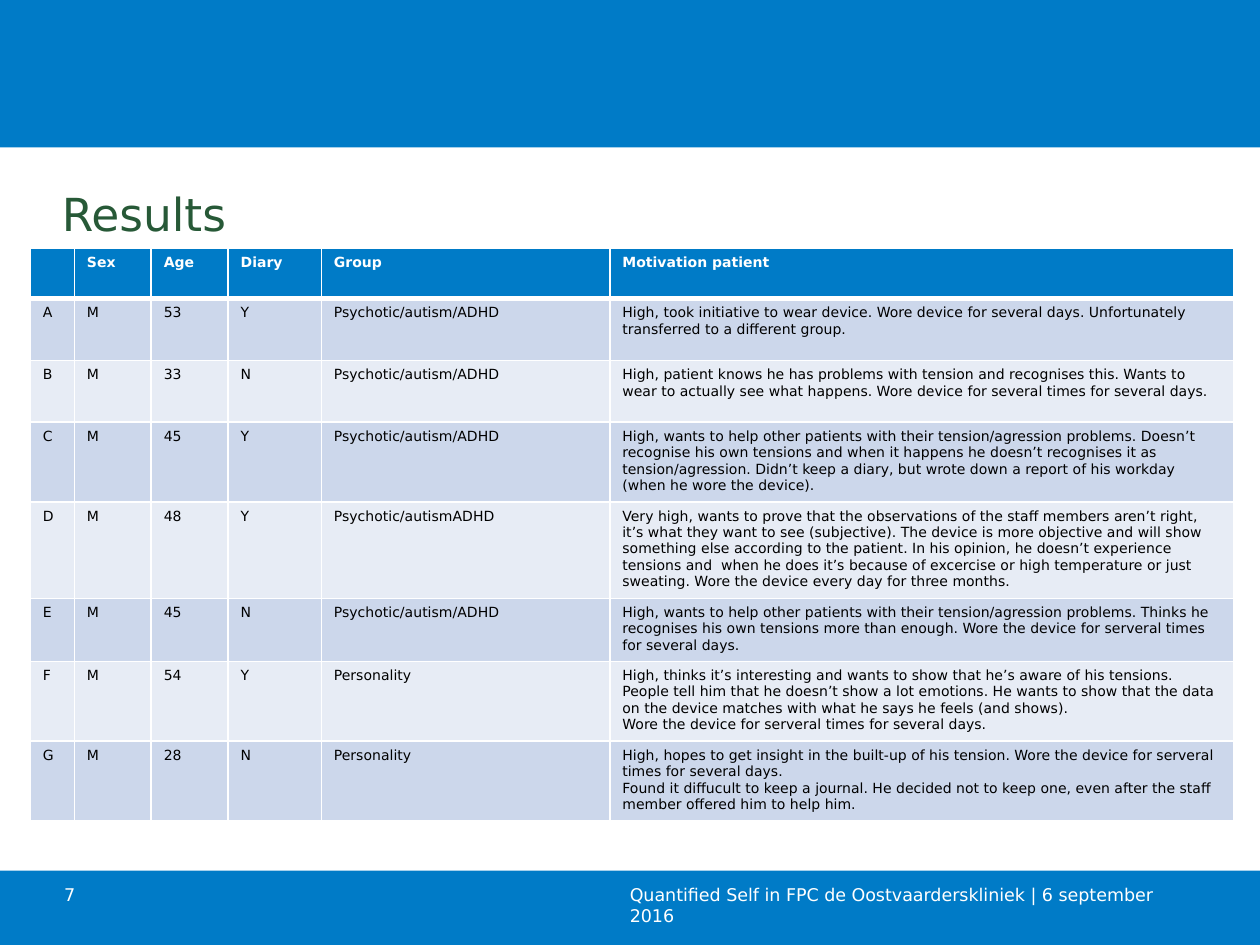
from dataclasses import dataclass

from lxml import etree
from pptx import Presentation
from pptx.dml.color import RGBColor
from pptx.enum.shapes import MSO_SHAPE
from pptx.enum.text import MSO_ANCHOR, PP_ALIGN
from pptx.oxml.ns import qn
from pptx.util import Inches, Pt

RECTANGLE = MSO_SHAPE.RECTANGLE
LEFT = PP_ALIGN.LEFT
TOP, MIDDLE = MSO_ANCHOR.TOP, MSO_ANCHOR.MIDDLE
TITLE_ONLY = 5
FONT = "DejaVu Sans"
COLORS = {
    "blue": "007BC7",
    "green": "275937",
    "odd": "CCD7EB",
    "even": "E7ECF5",
    "white": "FFFFFF",
    "black": "000000",
}


@dataclass
class Area:
    left: float
    top: float
    width: float
    height: float

    def lengths(self) -> list:
        return [Inches(v) for v in (self.left, self.top, self.width, self.height)]


@dataclass
class Patient:
    code: str
    sex: str
    age: str
    diary: str
    group: str
    motivation: str
    row_height: float

    def texts(self) -> list:
        return [self.code, self.sex, self.age, self.diary, self.group, self.motivation]


BANDS = [Area(0, 0, 10, 1.17), Area(0, 6.91, 10, 0.59)]
TITLE_AREA = Area(0.39, 1.38, 9, 0.62)
TABLE_AREA = Area(0.24, 1.97, 9.55, 4.48)
FOOTERS = [
    (Area(4.9, 6.97, 4.55, 0.39),
     "Quantified Self in FPC de Oostvaarderskliniek | 6 september 2016"),
    (Area(0.41, 6.97, 0.78, 0.39), "7"),
]
HEADERS = ["", "Sex", "Age", "Diary", "Group", "Motivation patient"]
COLUMN_WIDTHS = [0.35, 0.61, 0.61, 0.74, 2.29, 4.95]
HEADER_HEIGHT = 0.4
MIXED = "Psychotic/autism/ADHD"
PATIENTS = [
    Patient("A", "M", "53", "Y", MIXED,
            "High, took initiative to wear device. Wore device for several days. "
            "Unfortunately transferred to a different group.", 0.49),
    Patient("B", "M", "33", "N", MIXED,
            "High, patient knows he has problems with tension and recognises this. "
            "Wants to wear to actually see what happens. Wore device for several "
            "times for several days.", 0.49),
    Patient("C", "M", "45", "Y", MIXED,
            "High, wants to help other patients with their tension/agression "
            "problems. Doesn’t recognise his own tensions and when it happens he "
            "doesn’t recognises it as tension/agression. Didn’t keep a diary, but "
            "wrote down a report of his workday (when he wore the device).", 0.62),
    Patient("D", "M", "48", "Y", "Psychotic/autismADHD",
            "Very high, wants to prove that the observations of the staff members "
            "aren’t right, it’s what they want to see (subjective). The device is "
            "more objective and will show something else according to the patient. "
            "In his opinion, he doesn’t experience tensions and  when he does it’s "
            "because of excercise or high temperature or just sweating. Wore the "
            "device every day for three months.", 0.75),
    Patient("E", "M", "45", "N", MIXED,
            "High, wants to help other patients with their tension/agression "
            "problems. Thinks he recognises his own tensions more than enough. "
            "Wore the device for serveral times for several days.", 0.49),
    Patient("F", "M", "54", "Y", "Personality",
            "High, thinks it’s interesting and wants to show that he’s aware of his "
            "tensions. People tell him that he doesn’t show a lot emotions. He wants "
            "to show that the data on the device matches with what he says he feels "
            "(and shows).\nWore the device for serveral times for several days.", 0.62),
    Patient("G", "M", "28", "N", "Personality",
            "High, hopes to get insight in the built-up of his tension. Wore the "
            "device for serveral times for several days.\nFound it diffucult to keep "
            "a journal. He decided not to keep one, even after the staff member "
            "offered him to help him.", 0.62),
]


def rgb(name: str) -> RGBColor:
    return RGBColor.from_string(COLORS[name])


def write(frame, text: str, size: float, color: str, bold: bool = False) -> None:
    frame.text = text
    font_format = {"name": FONT, "size": Pt(size), "bold": bold}
    for para in frame.paragraphs:
        para.alignment = LEFT
        for span in para.runs:
            for key, value in font_format.items():
                setattr(span.font, key, value)
            span.font.color.rgb = rgb(color)


def add_band(page, area: Area) -> None:
    band = page.shapes.add_shape(RECTANGLE, *area.lengths())
    band.shadow.inherit = False
    band.fill.solid()
    band.fill.fore_color.rgb = rgb("blue")
    band.line.fill.background()


def add_footer(page, area: Area, text: str) -> None:
    frame = page.shapes.add_textbox(*area.lengths()).text_frame
    frame.word_wrap = True
    frame.vertical_anchor = TOP
    write(frame, text, 10, "white")


def set_title(page, area: Area, text: str) -> None:
    title = page.shapes.title
    title.left, title.top, title.width, title.height = area.lengths()
    title.text_frame.vertical_anchor = MIDDLE
    write(title.text_frame, text, 26, "green")


def set_borders(cell, points: dict) -> None:
    properties = cell._tc.get_or_add_tcPr()
    for side, width in points.items():
        line = etree.SubElement(properties, qn(f"a:ln{side}"), w=str(Pt(width)))
        fill = etree.SubElement(line, qn("a:solidFill"))
        etree.SubElement(fill, qn("a:srgbClr"), val=COLORS["white"])


def add_patient_table(page) -> None:
    rows = [HEADERS] + [patient.texts() for patient in PATIENTS]
    heights = [HEADER_HEIGHT] + [patient.row_height for patient in PATIENTS]
    table = page.shapes.add_table(len(rows), len(HEADERS), *TABLE_AREA.lengths()).table
    for column, width in zip(table.columns, COLUMN_WIDTHS):
        column.width = Inches(width)
    for row, height in zip(table.rows, heights):
        row.height = Inches(height)

    for row_index, texts in enumerate(rows):
        header = row_index == 0
        fill = "blue" if header else "odd" if row_index % 2 else "even"
        borders = {"L": 1, "R": 1, "T": 3 if row_index == 1 else 1, "B": 3 if header else 1}
        for column_index, text in enumerate(texts):
            cell = table.cell(row_index, column_index)
            set_borders(cell, borders)
            cell.fill.solid()
            cell.fill.fore_color.rgb = rgb(fill)
            write(cell.text_frame, text, 8, "white" if header else "black", header)


def main() -> None:
    deck = Presentation()
    deck.slide_width, deck.slide_height = Inches(10), Inches(7.5)
    page = deck.slides.add_slide(deck.slide_layouts[TITLE_ONLY])

    # Bands and footer texts
    for area in BANDS:
        add_band(page, area)
    for area, text in FOOTERS:
        add_footer(page, area, text)

    # Title and results
    set_title(page, TITLE_AREA, "Results")
    add_patient_table(page)
    deck.save("out.pptx")


if __name__ == "__main__":
    main()
